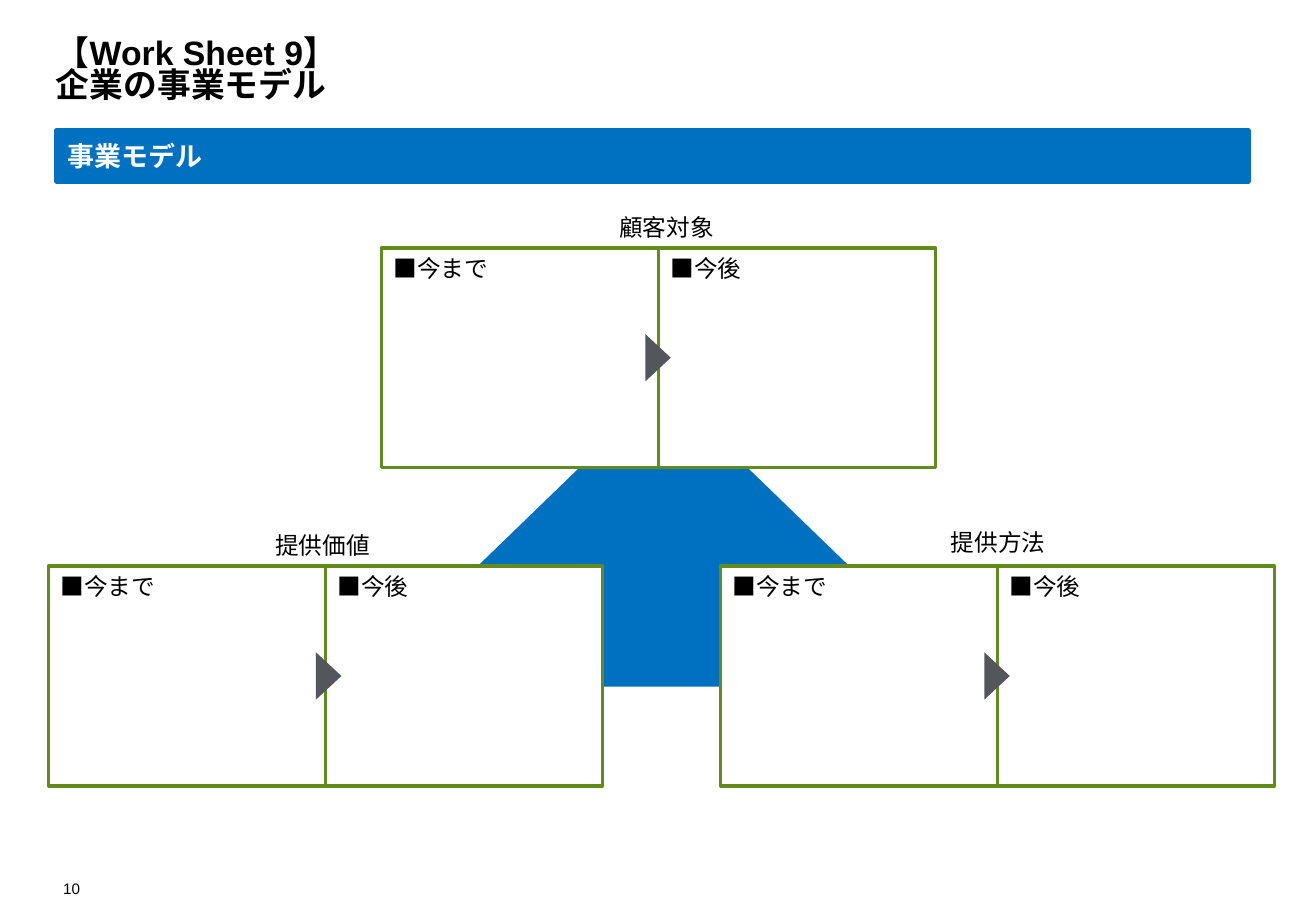
from dataclasses import dataclass

from lxml.etree import SubElement
from pptx import Presentation
from pptx.dml.color import RGBColor
from pptx.enum.shapes import MSO_SHAPE
from pptx.enum.text import MSO_ANCHOR, PP_ALIGN
from pptx.oxml.ns import qn
from pptx.util import Inches, Pt


@dataclass(frozen=True)
class Theme:
    blue: RGBColor = RGBColor(0x00, 0x70, 0xC0)
    green: RGBColor = RGBColor(0x63, 0x8B, 0x1B)
    gray: RGBColor = RGBColor(0x53, 0x56, 0x5A)
    white: RGBColor = RGBColor(0xFF, 0xFF, 0xFF)
    black: RGBColor = RGBColor(0x00, 0x00, 0x00)
    latin_font: str = "Arial"
    japanese_font: str = "Noto Sans CJK JP"
    title_size: int = 20
    banner_size: int = 16
    body_size: int = 14
    page_number_size: int = 9


theme = Theme()


def write(para, text, size, color=theme.black, bold=False):
    """Add one run with both its Latin and its Japanese typeface."""
    span = para.add_run()
    span.text = text
    span.font.size = Pt(size)
    span.font.bold = bold
    span.font.color.rgb = color
    span.font.name = theme.latin_font
    SubElement(span.font._element, qn("a:ea"), typeface=theme.japanese_font)


def draw(kind, left, top, width, height, fill, line=None):
    """Add a flat preset shape, outlined only when a line colour is given."""
    shape = page.shapes.add_shape(
        kind, Inches(left), Inches(top), Inches(width), Inches(height))
    shape.shadow.inherit = False
    shape.fill.solid()
    shape.fill.fore_color.rgb = fill
    if line is None:
        shape.line.fill.background()
    else:
        shape.line.color.rgb = line
        shape.line.width = Pt(2)
    return shape


deck = Presentation()
deck.slide_width, deck.slide_height = Inches(10.83), Inches(7.5)
page = deck.slides.add_slide(deck.slide_layouts[5])

# Title
title = page.shapes.title
title.left, title.top = Inches(0.46), Inches(0.15)
title.width, title.height = Inches(9.92), Inches(0.71)
frame = title.text_frame
frame.margin_left = frame.margin_right = frame.margin_top = frame.margin_bottom = 0
frame.vertical_anchor = MSO_ANCHOR.BOTTOM
para = frame.paragraphs[0]
para.alignment = PP_ALIGN.LEFT
para.line_spacing = 0.8
write(para, "【Work Sheet 9】", theme.title_size, bold=True)
para.add_line_break()
write(para, "企業の事業モデル", theme.title_size, bold=True)

# Page number
number = page.shapes.add_textbox(Inches(0.46), Inches(7.2), Inches(0.2), Inches(0.19))
frame = number.text_frame
frame.margin_left = frame.margin_right = frame.margin_top = frame.margin_bottom = 0
frame.vertical_anchor = MSO_ANCHOR.BOTTOM
frame.word_wrap = False
frame.paragraphs[0].alignment = PP_ALIGN.RIGHT
write(frame.paragraphs[0], "10", theme.page_number_size)

# Central triangle and section banner
draw(MSO_SHAPE.ISOSCELES_TRIANGLE, 2.94, 3.2, 5.04, 2.44, theme.blue, theme.blue)
banner = draw(MSO_SHAPE.RECTANGLE, 0.46, 1.07, 9.82, 0.43, theme.blue, theme.blue)
frame = banner.text_frame
frame.margin_right = Inches(0.08)
frame.vertical_anchor = MSO_ANCHOR.MIDDLE
frame.paragraphs[0].alignment = PP_ALIGN.LEFT
write(frame.paragraphs[0], "事業モデル", theme.banner_size, theme.white, bold=True)

# Each topic: label, its left and top, left and top of the boxes, arrow left
topics = [
    ("顧客対象", 4.31, 1.7, 3.14, 2.04, 5.22),
    ("提供方法", 7.04, 4.3, 5.93, 4.66, 8.01),
    ("提供価値", 1.48, 4.32, 0.4, 4.66, 2.51),
]
box_width, box_height = 2.28, 1.81
for label, label_left, label_top, left, top, arrow_left in topics:
    for column, heading in enumerate(("■今まで", "■今後")):
        box = draw(MSO_SHAPE.RECTANGLE, left + column * box_width, top,
                   box_width, box_height, theme.white, theme.green)
        box.text_frame.vertical_anchor = MSO_ANCHOR.TOP
        para = box.text_frame.paragraphs[0]
        para.alignment = PP_ALIGN.LEFT
        write(para, heading, theme.body_size)

    caption = page.shapes.add_textbox(
        Inches(label_left), Inches(label_top), Inches(2.35), Inches(0.34))
    caption.text_frame.word_wrap = True
    para = caption.text_frame.paragraphs[0]
    para.alignment = PP_ALIGN.CENTER
    write(para, label, theme.body_size)

    arrow = draw(MSO_SHAPE.ISOSCELES_TRIANGLE, arrow_left, top + 0.8, 0.39, 0.21, theme.gray)
    arrow.rotation = 90

deck.save("out.pptx")
